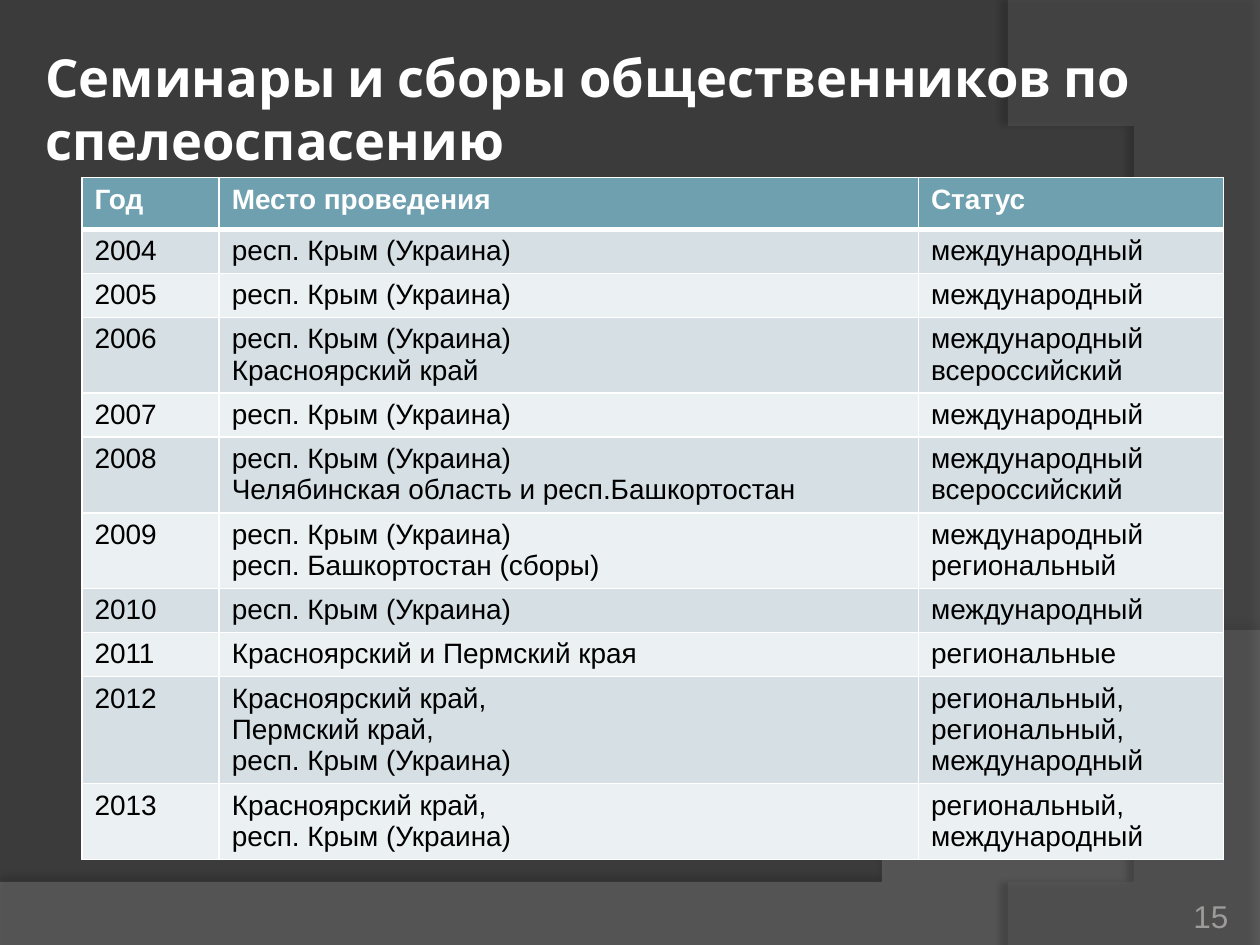
import pptx
import pptx.util
import pptx.dml.color
import pptx.enum.text
import pptx.oxml
import pptx.oxml.ns
from lxml import etree

Inches, Pt = pptx.util.Inches, pptx.util.Pt
RGB = pptx.dml.color.RGBColor
PP_ALIGN, ANCHOR = pptx.enum.text.PP_ALIGN, pptx.enum.text.MSO_ANCHOR
qn = pptx.oxml.ns.qn

# Content
TITLE = "Семинары и сборы общественников по спелеоспасению"
PAGE = "15"
HEADER = ("Год", "Место проведения", "Статус")
CRIMEA = "респ. Крым (Украина)"
KRASNOYARSK = "Красноярский край,"
WORLD = "международный"
ROWS = [  # year, place paragraphs, status paragraphs, lines of text
    ("2004", [CRIMEA], [WORLD], 1),
    ("2005", [CRIMEA], [WORLD], 1),
    ("2006", [CRIMEA, "Красноярский край"], ["международный всероссийский"], 2),
    ("2007", [CRIMEA], [WORLD], 1),
    ("2008", [CRIMEA, "Челябинская область и респ.Башкортостан"],
     ["международный всероссийский"], 2),
    ("2009", [CRIMEA, "респ. Башкортостан (сборы)"], [WORLD, "региональный"], 2),
    ("2010", [CRIMEA], [WORLD], 1),
    ("2011", ["Красноярский и Пермский края"], ["региональные"], 1),
    ("2012", [KRASNOYARSK, "Пермский край,", CRIMEA],
     ["региональный,", "региональный, международный"], 3),
    ("2013", [KRASNOYARSK, CRIMEA], ["региональный, международный"], 2),
]

# Layout in inches
COLS = (1.09, 5.55, 2.42)
HEADER_H, ROW_H, LINE_H = 0.41, 0.35, 0.25

# Colours
BACK, WHITE, BLACK = RGB(0x3B, 0x3B, 0x3B), RGB(255, 255, 255), RGB(0, 0, 0)
WAVE, SIDE = RGB(0x7F, 0x7F, 0x7F), RGB(0x5E, 0x5E, 0x5E)
HEAD = RGB(0x6E, 0xA0, 0xB0)
BANDS = (RGB(0xD5, 0xDF, 0xE4), RGB(0xEB, 0xF0, 0xF2))
PAGE_GREY = RGB(0x9D, 0x9B, 0x9A)


def curve(a, b, c, d, steps=40):
    """Points of a cubic Bezier curve from a to d."""
    pts = []
    for i in range(steps + 1):
        t = i / steps
        u = 1 - t
        pts.append(tuple(u**3 * p + 3 * u * u * t * q + 3 * u * t * t * r + t**3 * s
                         for p, q, r, s in zip(a, b, c, d)))
    return pts


def add_wave(slide, index, pts, color, alpha, shade, dist, angle):
    """Translucent background shape with an outer shadow."""
    fb = slide.shapes.build_freeform(*pts[0], scale=Inches(1))
    fb.add_line_segments(pts[1:], close=True)
    sp = fb.convert_to_shape()
    sp.fill.solid()
    sp.fill.fore_color.rgb = color
    clr = sp.fill._xPr.find(qn("a:solidFill"))[0]
    etree.SubElement(clr, qn("a:alpha"), val=str(alpha * 1000))
    sp.line.fill.background()
    sp.shadow.inherit = False
    effects = sp._element.spPr.find(qn("a:effectLst"))
    shadow = etree.SubElement(effects, qn("a:outerShdw"), blurRad=str(Pt(4)),
                              dist=str(Pt(dist)), dir=str(angle * 60000), rotWithShape="0")
    clr = etree.SubElement(shadow, qn("a:srgbClr"), val="000000")
    etree.SubElement(clr, qn("a:alpha"), val=str(shade * 1000))
    slide.shapes._spTree.insert(2 + index, sp._element)


def add_run(p, text, size, font, color, bold=False):
    r = p.add_run()
    r.text = text
    r.font.size, r.font.name, r.font.bold = Pt(size), font, bold
    r.font.color.rgb = color


def fill_cell(cell, paragraphs, fill, color, bold=False, bottom=1):
    tf = cell.text_frame
    for i, text in enumerate(paragraphs):
        p = tf.paragraphs[0] if i == 0 else tf.add_paragraph()
        add_run(p, text, 16, "Arial", color, bold)
    tcPr = cell._tc.get_or_add_tcPr()
    for side, width in (("L", 1), ("R", 1), ("T", 1), ("B", bottom)):
        ln = etree.SubElement(tcPr, qn("a:ln" + side), w=str(Pt(width)))
        solid = etree.SubElement(ln, qn("a:solidFill"))
        etree.SubElement(solid, qn("a:srgbClr"), val=str(WHITE))
    cell.fill.solid()
    cell.fill.fore_color.rgb = fill


def main():
    prs = pptx.Presentation()
    prs.slide_width, prs.slide_height = Inches(10), Inches(7.5)
    slide = prs.slides.add_slide(prs.slide_layouts[5])
    slide.background.fill.solid()
    slide.background.fill.fore_color.rgb = BACK

    # Background waves
    bottom = [(0, 7.05), (0, 7.5), (10, 7.5)]
    bottom += curve((10, 5.2), (5.59, 7.29), (3.91, 7.19), (0, 7.05))
    add_wave(slide, 0, bottom, WAVE, 45, 35, 3.5, 270)
    right = [(10, 0.02), (10, 7.5)]
    right += curve((8.21, 7.5), (9.35, 6.19), (10.18, 3), (8, 0))
    add_wave(slide, 1, right, SIDE, 40, 45, 4, 180)

    # Title
    title = slide.shapes.title
    title.left, title.top = Inches(0.31), Inches(0.3)
    title.width, title.height = Inches(9.69), Inches(1.11)
    tf = title.text_frame
    tf.word_wrap = True
    tf.auto_size = pptx.enum.text.MSO_AUTO_SIZE.NONE
    tf.vertical_anchor = ANCHOR.MIDDLE
    tf.margin_left = tf.margin_right = tf.margin_top = tf.margin_bottom = Inches(0.05)
    tf.paragraphs[0].alignment = PP_ALIGN.LEFT
    add_run(tf.paragraphs[0], TITLE, 30, "Cabin", WHITE, True)

    # Table: row height follows the number of text lines
    heights = [HEADER_H] + [ROW_H + LINE_H * (row[3] - 1) for row in ROWS]
    table = slide.shapes.add_table(len(heights), len(COLS), Inches(0.65), Inches(1.41),
                                   Inches(sum(COLS)), Inches(sum(heights))).table
    for col, width in zip(table.columns, COLS):
        col.width = Inches(width)
    for row, height in zip(table.rows, heights):
        row.height = Inches(height)
    for c, text in enumerate(HEADER):
        fill_cell(table.cell(0, c), [text], HEAD, WHITE, True, 3)
    for i, (year, places, statuses, _) in enumerate(ROWS):
        for c, paragraphs in enumerate(([year], places, statuses)):
            fill_cell(table.cell(i + 1, c), paragraphs, BANDS[i % 2], BLACK)

    # Page number
    tf = slide.shapes.add_textbox(Inches(8.92), Inches(7.02),
                                  Inches(0.83), Inches(0.4)).text_frame
    tf.word_wrap = True
    tf.vertical_anchor = ANCHOR.BOTTOM
    tf.margin_left = tf.margin_right = tf.margin_top = tf.margin_bottom = 0
    tf.paragraphs[0].alignment = PP_ALIGN.RIGHT
    add_run(tf.paragraphs[0], PAGE, 18, "Arial", PAGE_GREY)

    prs.save("out.pptx")


if __name__ == "__main__":
    main()
